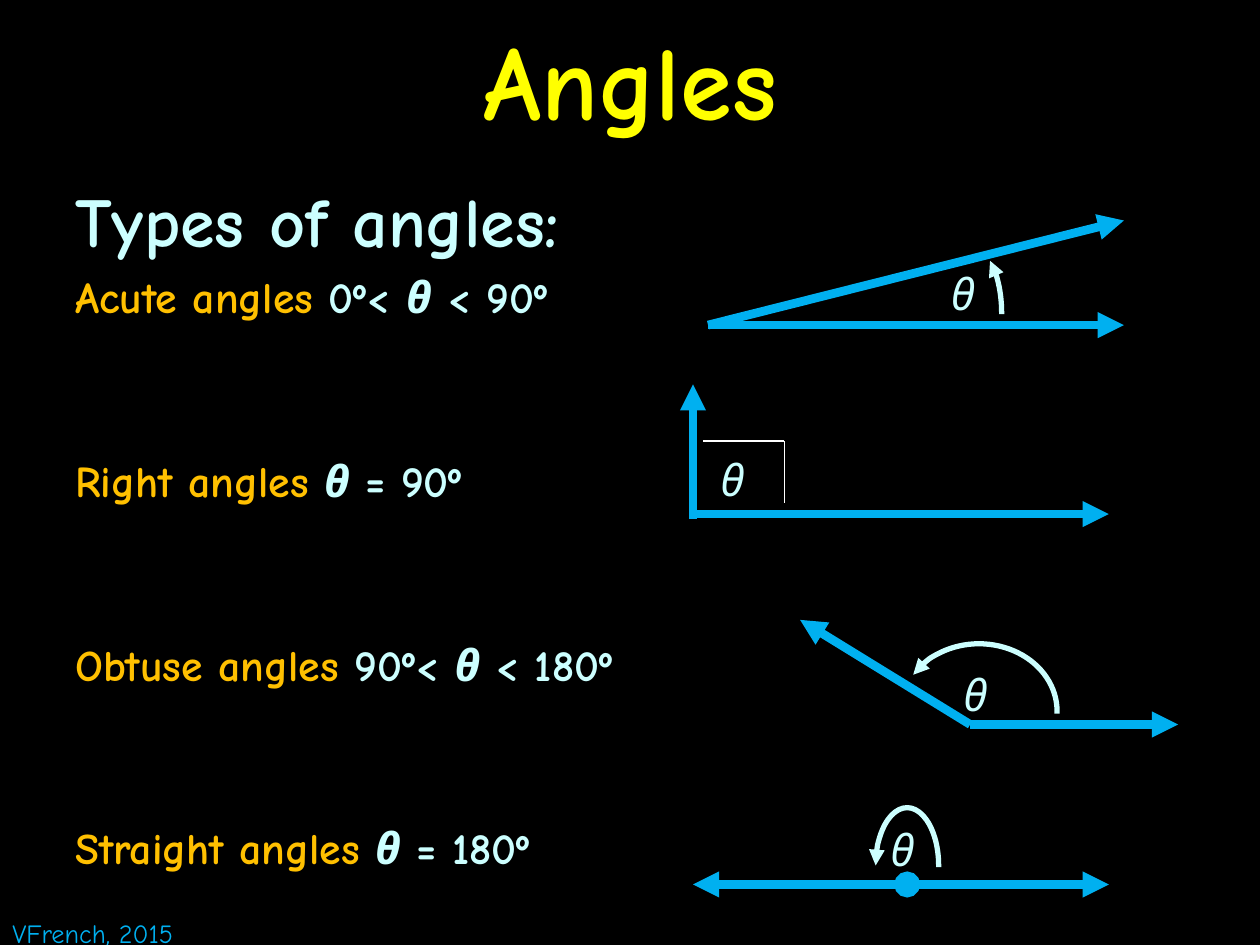
import pptx
import pptx.dml.color
import pptx.enum.shapes
import pptx.enum.text
import pptx.oxml.xmlchemy
import pptx.util

COLUMNS, ROWS = 100, 75
BLACK, YELLOW, PALE, ORANGE, BLUE, WHITE = (
    "000000", "FFFF00", "CCFFFF", "FFC000", "00B0F0", "FFFFFF")


def color(value):
    return pptx.dml.color.RGBColor.from_string(value)


def add_run(paragraph, text, size=25, fill=PALE, bold=False, italic=False):
    run = paragraph.add_run()
    run.text = text
    font = run.font
    font.name = "Comic Neue"
    font.size = pptx.util.Pt(size)
    font.bold, font.italic = bold, italic
    font.color.rgb = color(fill)


def style_line(shape, fill, weight, head=None, tail=None):
    """Format an outline; head marks its start and tail its end."""
    shape.line.color.rgb = color(fill)
    shape.line.width = pptx.util.Pt(weight)
    outline = shape.line._get_or_add_ln()
    for name, arrow in (("a:headEnd", head), ("a:tailEnd", tail)):
        if arrow:
            end = pptx.oxml.xmlchemy.OxmlElement(name)
            end.set("type", arrow)
            outline.append(end)


class AngleSlide:
    """Places elements on a grid of 100 columns and 75 rows."""

    def __init__(self, presentation):
        self.column = presentation.slide_width / COLUMNS
        self.row = presentation.slide_height / ROWS
        self.slide = presentation.slides.add_slide(presentation.slide_layouts[6])
        background = self.slide.background.fill
        background.solid()
        background.fore_color.rgb = color(BLACK)

    def place(self, *numbers):
        """Turn alternating columns and rows into lengths."""
        return [round(number * (self.row if index % 2 else self.column))
                for index, number in enumerate(numbers)]

    def text_frame(self, left, top, width, height, wrap=True):
        box = self.slide.shapes.add_textbox(*self.place(left, top, width, height))
        box.text_frame.word_wrap = wrap
        return box.text_frame

    def title(self, text):
        frame = self.text_frame(0, 0, COLUMNS, 12.5)
        frame.vertical_anchor = pptx.enum.text.MSO_ANCHOR.MIDDLE
        paragraph = frame.paragraphs[0]
        paragraph.alignment = pptx.enum.text.PP_ALIGN.CENTER
        add_run(paragraph, text, size=60, fill=YELLOW, bold=True)

    def label(self, text, left, top, width=4.2, height=5.2, **style):
        frame = self.text_frame(left, top, width, height, wrap=False)
        add_run(frame.paragraphs[0], text, **style)

    def angle_list(self, heading, entries):
        frame = self.text_frame(5, 13.3, 90, 61.7)
        paragraph = frame.paragraphs[0]
        paragraph.line_spacing = pptx.util.Pt(50)
        add_run(paragraph, heading, size=40, bold=True)
        for index, (name, before, after) in enumerate(entries):
            paragraph = frame.add_paragraph()
            paragraph.line_spacing = pptx.util.Pt(30)
            paragraph.space_before = pptx.util.Pt(75 if index else 5)
            add_run(paragraph, name + " angles ", fill=ORANGE, bold=True)
            if before:
                add_run(paragraph, before, bold=True)
            add_run(paragraph, "θ", bold=True, italic=True)
            add_run(paragraph, after, bold=True)

    def line(self, start, end, fill=BLUE, weight=5, head=None, tail=None):
        connector = self.slide.shapes.add_connector(
            pptx.enum.shapes.MSO_CONNECTOR.STRAIGHT, *self.place(*start, *end))
        style_line(connector, fill, weight, head, tail)
        properties = connector._element.spPr
        properties.append(pptx.oxml.xmlchemy.OxmlElement("a:effectLst"))

    def ray(self, vertex, tip, head=None):
        self.line(vertex, tip, head=head, tail="triangle")

    def arc(self, left, top, width, height, start, end):
        """Draw a clockwise arc, angles in degrees, with an arrow at its start."""
        shape = self.slide.shapes.add_shape(
            pptx.enum.shapes.MSO_SHAPE.ARC, *self.place(left, top, width, height))
        shape.shadow.inherit = False
        shape.fill.background()
        for index, degrees in enumerate((start, end)):
            shape.adjustments[index] = degrees * 60000 / 100000
        style_line(shape, PALE, 3, head="triangle")

    def theta(self, left, top):
        self.label("θ", left, top, italic=True)


def main():
    presentation = pptx.Presentation()
    presentation.slide_width = pptx.util.Inches(10)
    presentation.slide_height = pptx.util.Inches(7.5)
    page = AngleSlide(presentation)

    page.title("Angles")
    page.angle_list("Types of angles:", [
        ("Acute", "0º< ", " < 90º"),
        ("Right", "", " = 90º"),
        ("Obtuse", "90º< ", " < 180º"),
        ("Straight", "", " = 180º"),
    ])
    page.label("VFrench, 2015", 0, 72.3, 16.9, 3.5, size=15, fill=BLUE)

    # Acute angle
    vertex = (56.2, 25.8)
    page.ray(vertex, (89.2, 17.5))
    page.ray(vertex, (89.2, 25.8))
    page.arc(74.5, 19.5, 5, 10.7, 290.85, 1.86)
    page.theta(74.5, 20.7)

    # Right angle
    page.ray((55, 41.2), (55, 30.5))
    page.ray((55, 40.8), (88, 40.8))
    page.theta(56.2, 35.4)
    corner = (62.25, 35)
    for end in ((55.8, 35), (62.25, 39.9)):
        page.line(corner, end, fill=WHITE, weight=0.75)

    # Obtuse angle
    vertex = (77, 57.5)
    page.ray(vertex, (63.5, 49.2))
    page.ray(vertex, (93.5, 57.5))
    page.arc(71.5, 51.1, 12.4, 10.7, 208.98, 1.86)
    page.theta(75.5, 52.5)

    # Straight angle
    vertex = (72, 70.2)
    page.ray(vertex, (88, 70.2))
    page.arc(69.5, 64.1, 5, 9.2, 180.28, 2.87)
    page.theta(69.7, 64.8)
    page.ray(vertex, (55, 70.2), head="oval")

    presentation.save("out.pptx")


if __name__ == "__main__":
    main()
